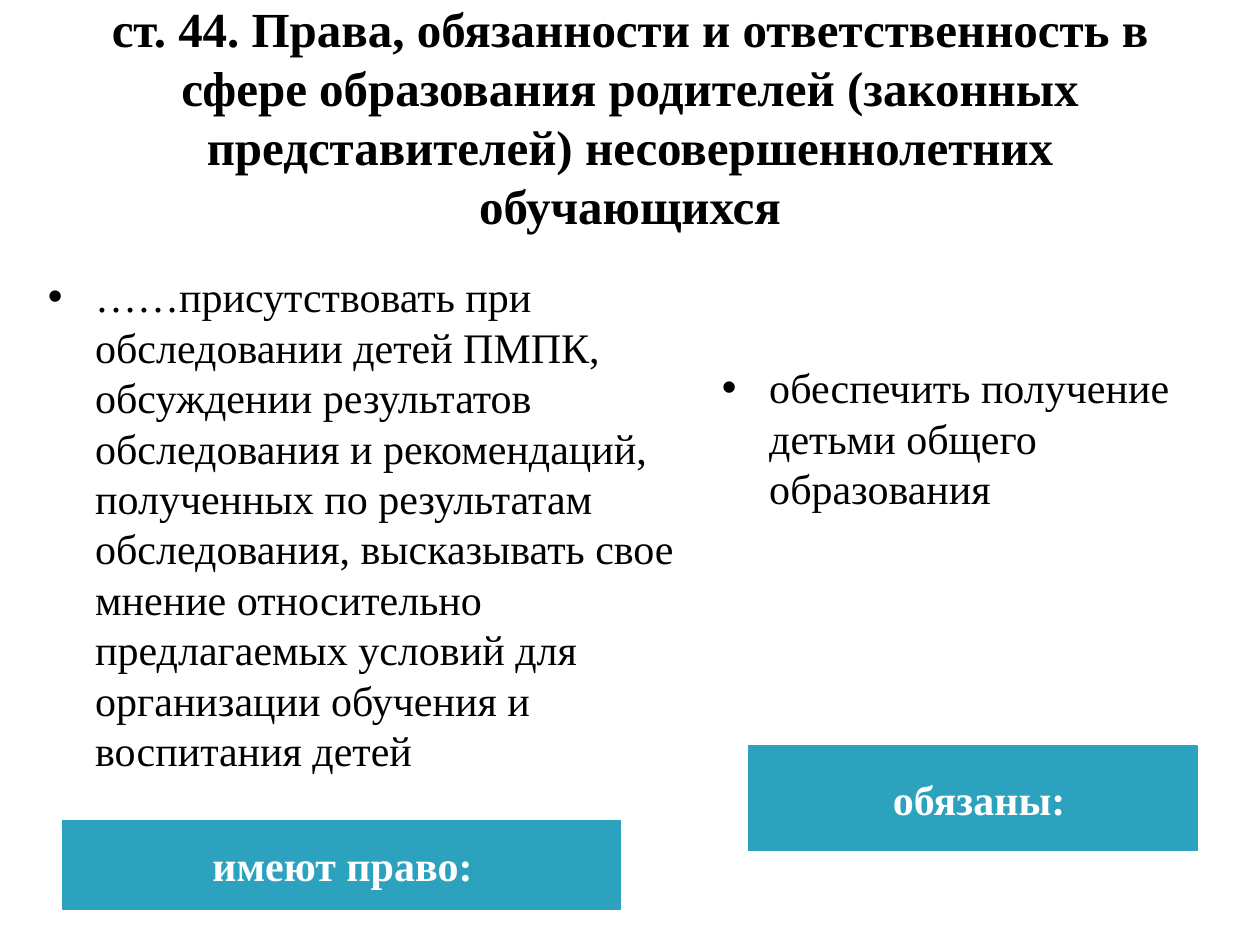
from lxml.etree import SubElement
from pptx import Presentation
from pptx.dml.color import RGBColor
from pptx.enum.text import MSO_ANCHOR, MSO_AUTO_SIZE, PP_ALIGN
from pptx.oxml.ns import qn
from pptx.util import Inches, Pt

FONT = "Times New Roman"
TEAL = "2DA2BF"
BLACK = "000000"
WHITE = "FFFFFF"


def color(value):
    return RGBColor.from_string(value)


def place(holder, box):
    holder.left, holder.top, holder.width, holder.height = map(Inches, box)


def write(holder, text, size, font_color, bold, align, anchor):
    frame = holder.text_frame
    frame.text = text
    frame.word_wrap = True
    frame.auto_size = MSO_AUTO_SIZE.NONE
    frame.vertical_anchor = anchor
    para = frame.paragraphs[0]
    para.alignment = align
    para.space_before = Pt(0)
    para.font.name = FONT
    para.font.size = Pt(size)
    para.font.bold = bold
    para.font.color.rgb = color(font_color)


def add_bullet(para):
    props = para._p.get_or_add_pPr()
    props.set("marL", str(Inches(0.4)))
    props.set("indent", str(Inches(-0.28)))
    bullet_color = SubElement(props, qn("a:buClr"))
    SubElement(bullet_color, qn("a:srgbClr"), val=TEAL)
    SubElement(props, qn("a:buSzPct"), val="68000")
    SubElement(props, qn("a:buChar"), char="▶")


def build_title(holder, box, text):
    place(holder, box)
    write(holder, text, 28, BLACK, True, PP_ALIGN.CENTER, MSO_ANCHOR.MIDDLE)


def build_label(holder, box, text):
    place(holder, box)
    holder.fill.solid()
    holder.fill.fore_color.rgb = color(TEAL)
    holder.line.color.rgb = color(TEAL)
    holder.line.width = Pt(0.75)
    holder.text_frame.margin_left = Inches(0.2)
    write(holder, text, 24, WHITE, True, PP_ALIGN.CENTER, MSO_ANCHOR.MIDDLE)


def build_list(holder, box, text):
    place(holder, box)
    add_bullet(holder.text_frame.paragraphs[0])
    write(holder, text, 24, BLACK, False, PP_ALIGN.LEFT, MSO_ANCHOR.TOP)


def main():
    deck = Presentation()
    deck.slide_width, deck.slide_height = Inches(10), Inches(7.5)
    page = deck.slides.add_slide(deck.slide_layouts.get_by_name("Comparison"))
    title, left_label, left_list, right_label, right_list = list(page.placeholders)[:5]

    # Heading
    build_title(title, (0.5, 0.3, 9, 1.25),
                "ст. 44. Права, обязанности и ответственность в сфере образования "
                "родителей (законных представителей) несовершеннолетних обучающихся")

    # Rights, on the left
    build_label(left_label, (0.5, 6.51, 4.42, 0.71), "имеют право: ")
    build_list(left_list, (0.28, 2.1, 5.2, 4.33),
               "……присутствовать при обследовании детей ПМПК, обсуждении результатов "
               "обследования и рекомендаций, полученных по результатам обследования, "
               "высказывать свое мнение относительно предлагаемых условий для "
               "организации обучения и воспитания детей")

    # Duties, on the right
    build_label(right_label, (5.94, 5.92, 3.56, 0.83), "обязаны:")
    build_list(right_list, (5.63, 2.82, 3.87, 3.07),
               "обеспечить получение детьми общего образования")

    # The layout's date, footer and number are not used
    for spare in list(page.placeholders)[5:]:
        spare.element.getparent().remove(spare.element)

    deck.save("out.pptx")


if __name__ == "__main__":
    main()
